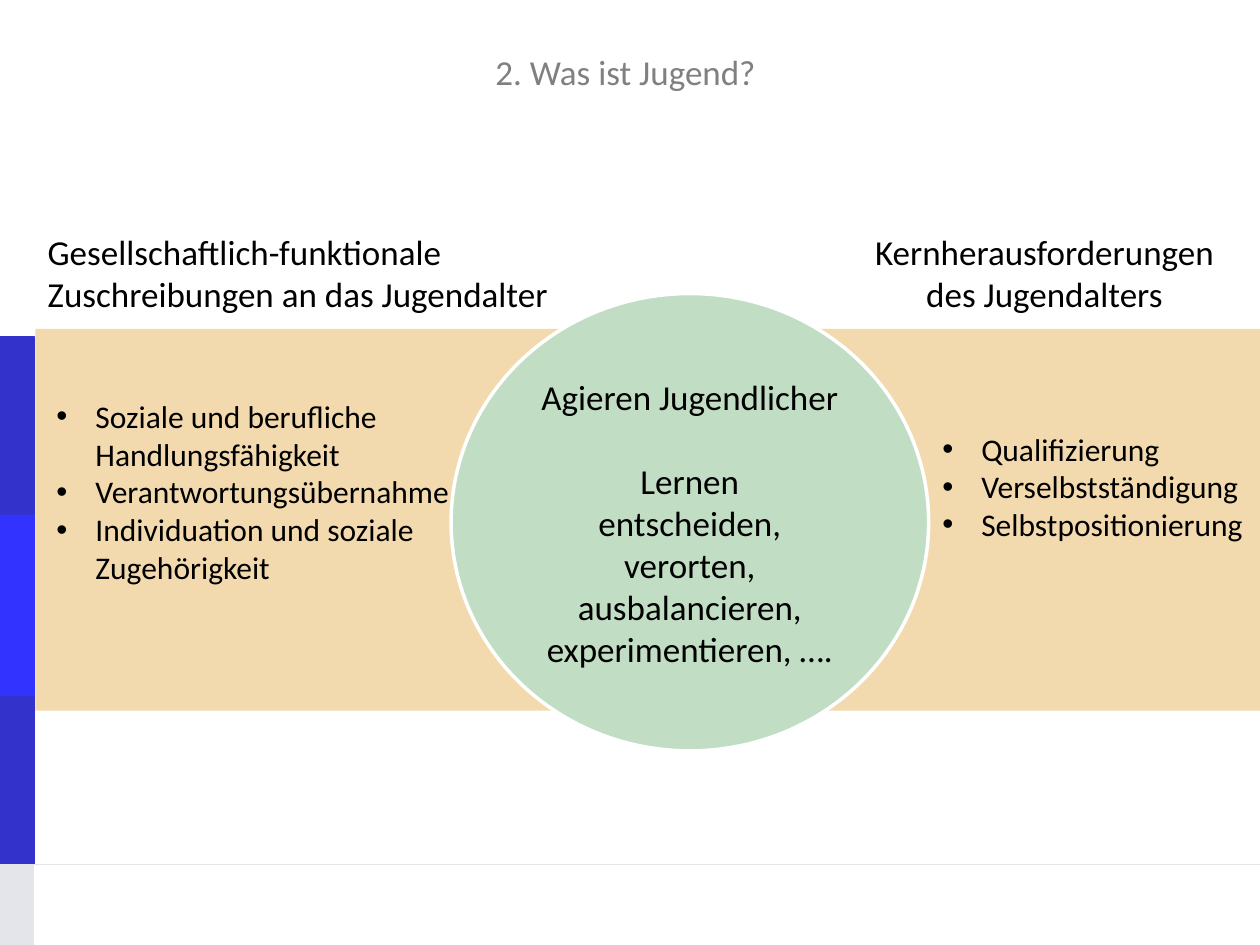
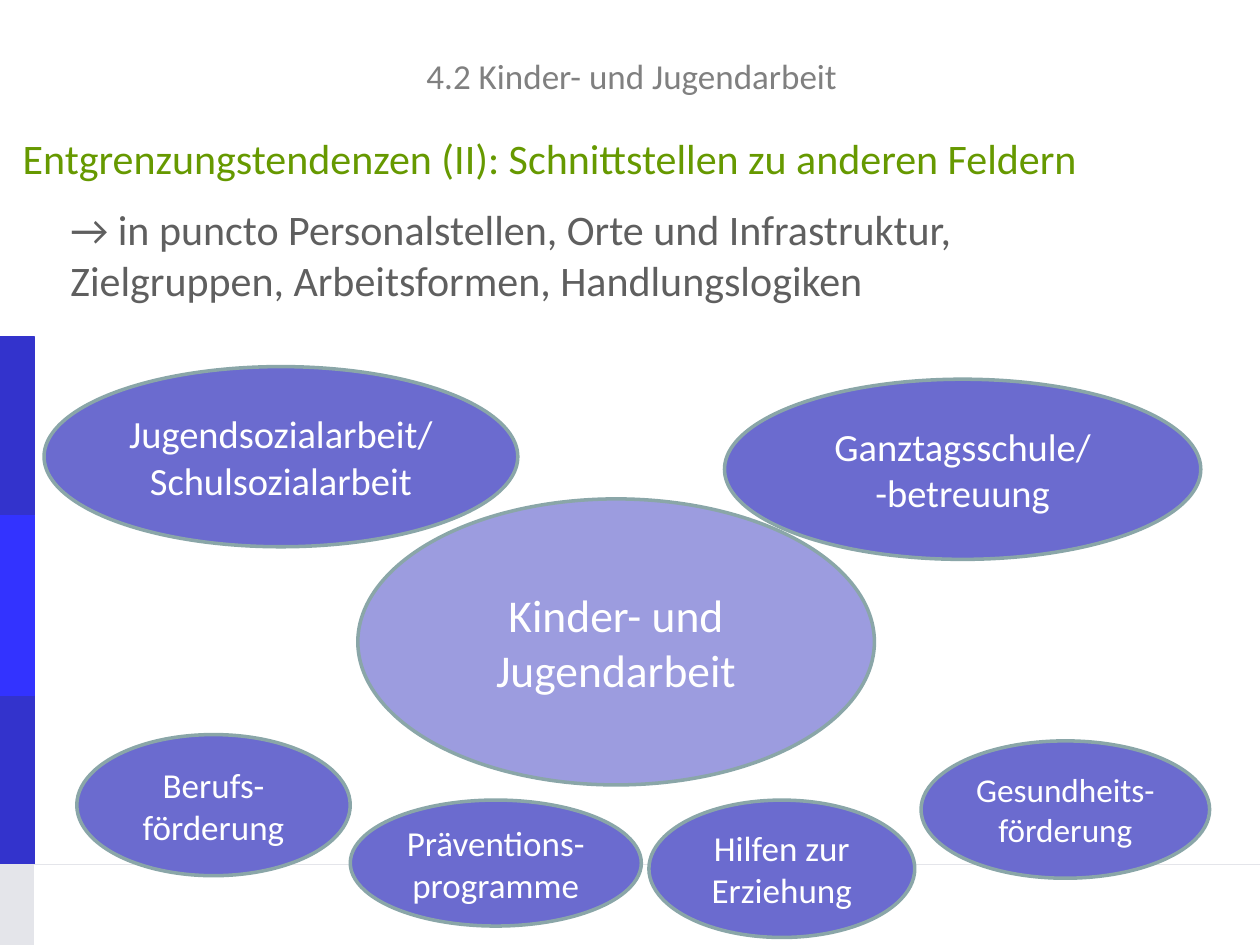
from dataclasses import dataclass
from typing import Any, Optional

from lxml.etree import SubElement
from pptx import Presentation
from pptx.dml.color import RGBColor
from pptx.enum.shapes import MSO_CONNECTOR, MSO_SHAPE
from pptx.enum.text import MSO_ANCHOR, PP_ALIGN
from pptx.oxml.ns import qn
from pptx.util import Pt

PX = 9144
WIDTH, HEIGHT = 1000, 750
FONT = "Calibri"

WHITE = RGBColor(0xFF, 0xFF, 0xFF)
BLACK = RGBColor(0x00, 0x00, 0x00)
BLUE = RGBColor(0x33, 0x33, 0xCC)
BRIGHT_BLUE = RGBColor(0x33, 0x33, 0xFF)
PALE_GREY = RGBColor(0xE4, 0xE5, 0xEA)
HEADING_GREY = RGBColor(0x80, 0x80, 0x80)
TEXT_GREY = RGBColor(0x5F, 0x5F, 0x5F)
TITLE_GREEN = RGBColor(0x66, 0x99, 0x00)
SAND = RGBColor(0xF2, 0xDA, 0xAE)
MINT = RGBColor(0xC1, 0xDD, 0xC4)
VIOLET = RGBColor(0x6B, 0x6B, 0xCF)
LIGHT_VIOLET = RGBColor(0x9C, 0x9C, 0xDF)
OUTLINE = RGBColor(0x8A, 0xA6, 0xA8)


@dataclass(frozen=True)
class Box:
    x: int
    y: int
    w: int
    h: int

    def emu(self) -> tuple[int, ...]:
        return tuple(v * PX for v in (self.x, self.y, self.w, self.h))


@dataclass(frozen=True)
class Band:
    box: Box
    color: RGBColor
    line_width: float = 0.75


@dataclass(frozen=True)
class Field:
    text: str
    box: Box
    size: int
    fill: RGBColor = VIOLET


BANDS = [
    Band(Box(0, 267, 27, 142), BLUE),
    Band(Box(0, 551, 27, 135), BLUE),
    Band(Box(0, 686, 27, 64), PALE_GREY, 0),
    Band(Box(0, 409, 27, 143), BRIGHT_BLUE),
]

FIELDS = [
    Field("Kinder- und Jugendarbeit", Box(284, 396, 410, 227), 26, LIGHT_VIOLET),
    Field("Jugendsozialarbeit/\nSchulsozialarbeit", Box(35, 291, 376, 143), 22),
    Field("Ganztagsschule/\n-betreuung", Box(575, 301, 378, 143), 22),
    Field("Hilfen zur Erziehung", Box(515, 635, 211, 109), 20),
    Field("Präventions-programme", Box(278, 635, 231, 100), 20),
    Field("Berufs-förderung", Box(61, 583, 217, 112), 20),
    Field("Gesundheits-förderung", Box(731, 588, 229, 109), 19),
]


def add_bullet(p: Any, indent: int = 31) -> None:
    pPr = p._p.get_or_add_pPr()
    pPr.set("marL", str(indent * PX))
    pPr.set("indent", str(-indent * PX))
    SubElement(pPr, qn("a:buFont"), typeface="Arial")
    SubElement(pPr, qn("a:buChar"), char="•")


def write(sp: Any, *texts: str, size: int, color: RGBColor = BLACK,
          align: PP_ALIGN = PP_ALIGN.LEFT, anchor: MSO_ANCHOR = MSO_ANCHOR.TOP,
          bullets: bool = False) -> Any:
    tf = sp.text_frame
    tf.word_wrap = True
    tf.vertical_anchor = anchor
    for i, text in enumerate(texts):
        p = tf.add_paragraph() if i else tf.paragraphs[0]
        if bullets:
            add_bullet(p)
        p.text = text
        p.alignment = align
        for r in p.runs:
            r.font.name = FONT
            r.font.size = Pt(size)
            r.font.color.rgb = color
    return tf


def add_filled(s: Any, kind: MSO_SHAPE, box: Box, fill: RGBColor,
               line: Optional[RGBColor] = None, line_width: float = 2) -> Any:
    sp = s.shapes.add_shape(kind, *box.emu())
    sp.shadow.inherit = False
    sp.fill.solid()
    sp.fill.fore_color.rgb = fill
    if line is None:
        sp.line.fill.background()
    else:
        sp.line.color.rgb = line
        sp.line.width = Pt(line_width)
    return sp


def add_text(s: Any, box: Box, *texts: str, fill: Optional[RGBColor] = None,
             **style: Any) -> None:
    sp = s.shapes.add_textbox(*box.emu())
    if fill is not None:
        sp.fill.solid()
        sp.fill.fore_color.rgb = fill
    write(sp, *texts, **style)


def add_ellipse(s: Any, box: Box, *texts: str, fill: RGBColor, line: RGBColor,
                size: int, color: RGBColor) -> Any:
    sp = add_filled(s, MSO_SHAPE.OVAL, box, fill, line)
    return write(sp, *texts, size=size, color=color, align=PP_ALIGN.CENTER,
                 anchor=MSO_ANCHOR.MIDDLE)


def add_slide(prs: Any, title: str, box: Box, **style: Any) -> Any:
    s = prs.slides.add_slide(prs.slide_layouts[5])
    sp = s.shapes.title
    sp.left, sp.top, sp.width, sp.height = box.emu()
    write(sp, title, anchor=MSO_ANCHOR.MIDDLE, **style)
    for band in BANDS:
        line = band.color if band.line_width else None
        add_filled(s, MSO_SHAPE.RECTANGLE, band.box, band.color, line, band.line_width)
    rule = s.shapes.add_connector(MSO_CONNECTOR.STRAIGHT, 0, 686 * PX, WIDTH * PX, 686 * PX)
    rule.line.color.rgb = PALE_GREY
    rule.line.width = Pt(0.5)
    SubElement(rule._element.spPr, qn("a:effectLst"))
    return s


def build_youth(prs: Any) -> None:
    s = add_slide(prs, "2. Was ist Jugend?", Box(28, 29, 937, 55),
                  size=20, color=HEADING_GREY, align=PP_ALIGN.CENTER)
    add_filled(s, MSO_SHAPE.RECTANGLE, Box(28, 261, 972, 303), SAND)
    add_text(s, Box(28, 178, 421, 77), "Gesellschaftlich-funktionale",
             "Zuschreibungen an das Jugendalter", fill=WHITE, size=20)
    add_text(s, Box(680, 178, 298, 77), "Kernherausforderungen\ndes Jugendalters",
             fill=WHITE, size=20, align=PP_ALIGN.CENTER)
    add_text(s, Box(35, 310, 336, 192), "Soziale und berufliche\nHandlungsfähigkeit",
             "Verantwortungsübernahme", "Individuation und soziale\nZugehörigkeit",
             size=18, bullets=True)
    add_text(s, Box(738, 336, 262, 131), "Qualifizierung", "Verselbstständigung",
             "Selbstpositionierung", size=18, bullets=True)
    tf = add_ellipse(s, Box(358, 233, 379, 363), "Agieren Jugendlicher", "Lernen",
                     "entscheiden, verorten, ausbalancieren, experimentieren, ….",
                     fill=MINT, line=WHITE, size=20, color=BLACK)
    tf.paragraphs[1].space_before = Pt(24)


def build_youth_work(prs: Any) -> None:
    s = add_slide(prs, "Entgrenzungstendenzen (II): Schnittstellen zu anderen Feldern",
                  Box(8, 63, 900, 125), size=24, color=TITLE_GREEN)
    add_text(s, Box(46, 157, 862, 110),
             "→ in puncto Personalstellen, Orte und Infrastruktur, "
             "Zielgruppen, Arbeitsformen, Handlungslogiken",
             size=24, color=TEXT_GREY)
    for field in FIELDS:
        add_ellipse(s, field.box, field.text, fill=field.fill, line=OUTLINE,
                    size=field.size, color=WHITE)
    add_text(s, Box(33, 28, 937, 64), "4.2 Kinder- und Jugendarbeit", size=20,
             color=HEADING_GREY, align=PP_ALIGN.CENTER, anchor=MSO_ANCHOR.MIDDLE)


def main() -> None:
    prs = Presentation()
    prs.slide_width, prs.slide_height = WIDTH * PX, HEIGHT * PX
    build_youth(prs)
    build_youth_work(prs)
    prs.save("out.pptx")


if __name__ == "__main__":
    main()
